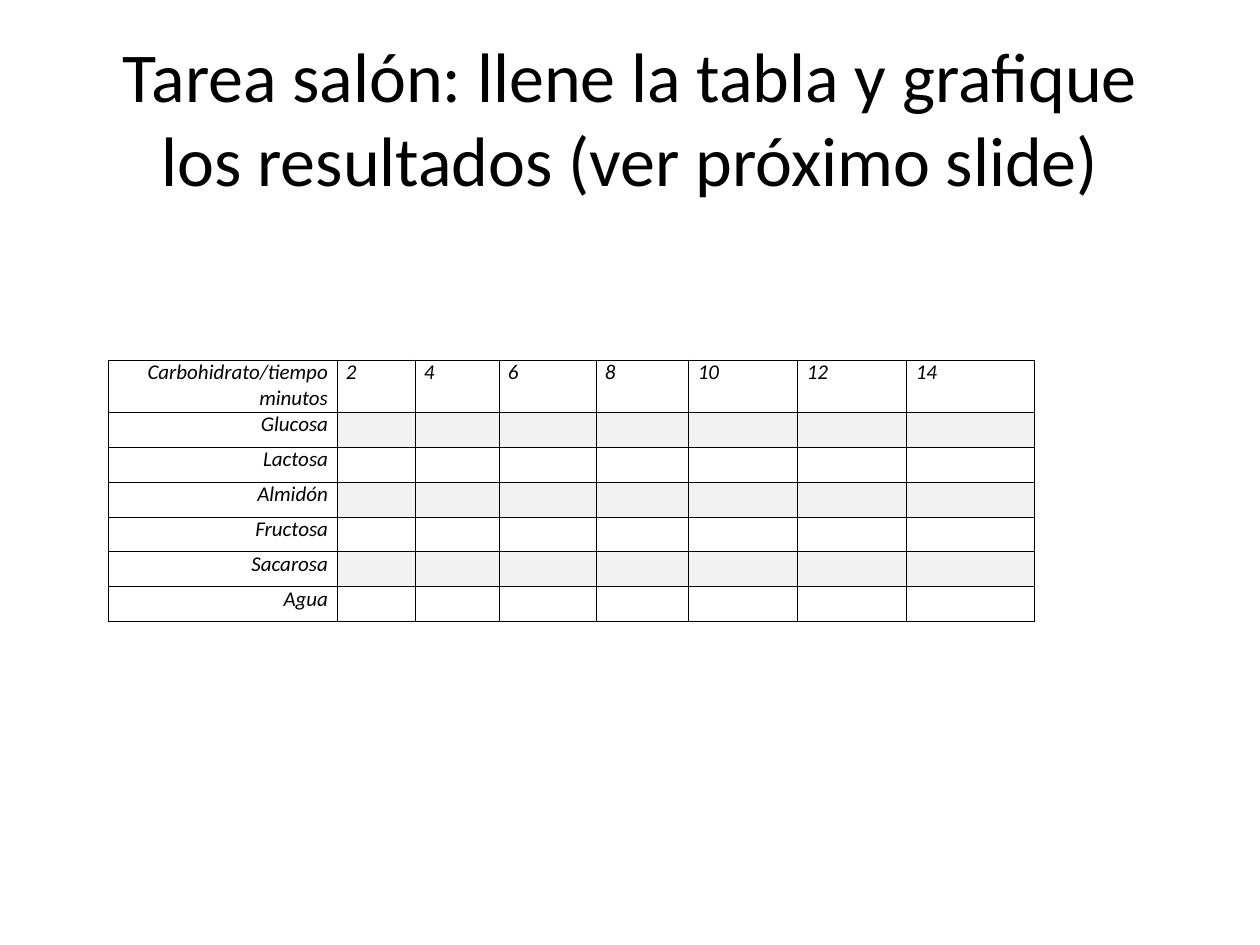
from dataclasses import dataclass

from lxml.etree import SubElement
from pptx import Presentation
from pptx.dml.color import RGBColor
from pptx.enum.text import MSO_ANCHOR as ANCHOR, MSO_AUTO_SIZE as FIT, PP_ALIGN as ALIGN
from pptx.oxml.ns import qn
from pptx.util import Emu, Pt

BLACK = RGBColor(0x00, 0x00, 0x00)
WHITE = RGBColor(0xFF, 0xFF, 0xFF)
GRAY = RGBColor(0xF2, 0xF2, 0xF2)
FONT = "Calibri"
MINUTES = range(2, 16, 2)
SAMPLES = ["Glucosa", "Lactosa", "Almidón", "Fructosa", "Sacarosa", "Agua"]


@dataclass(frozen=True)
class Column:
    head: str
    width: int
    align: ALIGN = ALIGN.LEFT


WIDTHS = [78, 84, 97, 93, 109, 109, 128]
COLUMNS = [Column("Carbohidrato/tiempo minutos", 229, ALIGN.RIGHT)] + [
    Column(str(minute), width) for minute, width in zip(MINUTES, WIDTHS)
]
HEAD_HEIGHT, ROW_HEIGHT = 52, 35


def px(n: int) -> Emu:
    return Emu(round(n * 914400 / 126))


def write(tf, text: str, *, size: int, align: ALIGN, italic: bool = False) -> None:
    p = tf.paragraphs[0]
    p.alignment = align
    if not text:
        p._p.get_or_add_endParaRPr().set("sz", str(size * 100))
        return
    r = p.add_run()
    r.text = text
    r.font.name = FONT
    r.font.size = Pt(size)
    r.font.italic = italic
    r.font.bold = False
    r.font.color.rgb = BLACK


def outline(cell, color: RGBColor) -> None:
    tc_pr = cell._tc.get_or_add_tcPr()
    for side in ("lnL", "lnR", "lnT", "lnB"):
        ln = SubElement(tc_pr, qn(f"a:{side}"), w=str(Pt(0.5)))
        fill = SubElement(ln, qn("a:solidFill"))
        SubElement(fill, qn("a:srgbClr"), val=str(color))


def draw_cell(cell, text: str, *, align: ALIGN, fill: RGBColor) -> None:
    cell.margin_left = cell.margin_right = px(9)
    cell.margin_top = cell.margin_bottom = 0
    outline(cell, BLACK)
    cell.fill.solid()
    cell.fill.fore_color.rgb = fill
    write(cell.text_frame, text, size=12, align=align, italic=True)


def draw_title(s, text: str) -> None:
    sp = s.shapes.title
    sp.left, sp.top, sp.width, sp.height = px(63), px(38), px(1134), px(157)
    tf = sp.text_frame
    tf.word_wrap = True
    tf.auto_size = FIT.NONE
    tf.vertical_anchor = ANCHOR.MIDDLE
    write(tf, text, size=40, align=ALIGN.CENTER)


def draw_table(s, left: int, top: int) -> None:
    rows = [[c.head for c in COLUMNS]]
    rows += [[name] + [""] * len(MINUTES) for name in SAMPLES]
    heights = [HEAD_HEIGHT] + [ROW_HEIGHT] * len(SAMPLES)
    width = sum(c.width for c in COLUMNS)
    table = s.shapes.add_table(
        len(rows), len(COLUMNS), px(left), px(top), px(width), px(sum(heights))
    ).table
    for column, c in zip(table.columns, COLUMNS):
        column.width = px(c.width)
    for i, (texts, height) in enumerate(zip(rows, heights)):
        table.rows[i].height = px(height)
        for j, (text, c) in enumerate(zip(texts, COLUMNS)):
            fill = GRAY if i % 2 and j else WHITE
            draw_cell(table.cell(i, j), text, align=c.align, fill=fill)


def main() -> None:
    prs = Presentation()
    prs.slide_width, prs.slide_height = px(1260), px(945)
    s = prs.slides.add_slide(prs.slide_layouts[5])
    draw_title(s, "Tarea salón: llene la tabla y grafique los resultados (ver próximo slide)")
    draw_table(s, 108, 360)
    prs.save("out.pptx")


if __name__ == "__main__":
    main()
